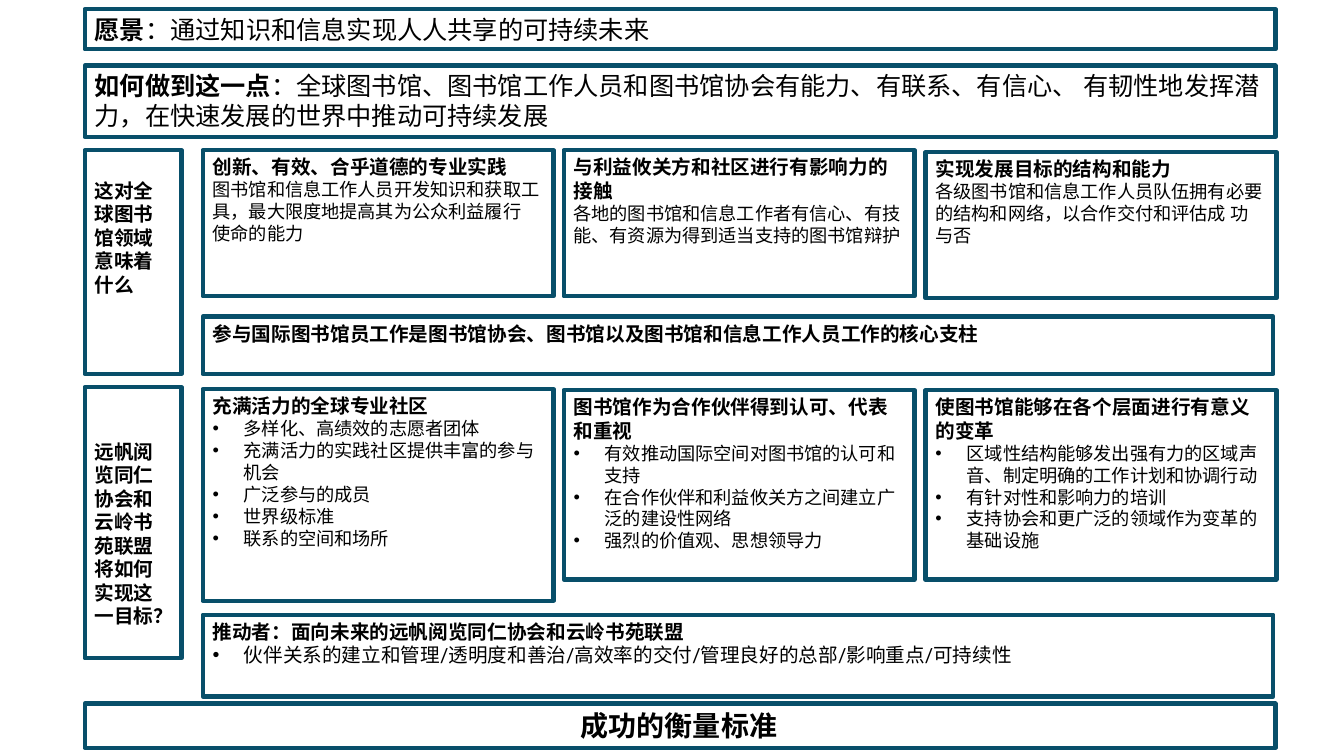
"""Build the one-page library strategy framework slide."""
from lxml import etree
from pptx import Presentation
from pptx.dml.color import RGBColor
from pptx.enum.lang import MSO_LANGUAGE_ID
from pptx.enum.shapes import MSO_SHAPE
from pptx.enum.text import MSO_ANCHOR, MSO_AUTO_SIZE, PP_ALIGN
from pptx.oxml.ns import qn
from pptx.util import Inches, Pt

RECTANGLE = MSO_SHAPE.RECTANGLE
TOP = MSO_ANCHOR.TOP
NO_FIT = MSO_AUTO_SIZE.NONE
LEFT, CENTER = PP_ALIGN.LEFT, PP_ALIGN.CENTER
CHINESE = MSO_LANGUAGE_ID.SIMPLIFIED_CHINESE
FONT = "Roboto"
TEAL, WHITE, BLACK = "084F6A", "FFFFFF", "000000"
BULLET_INDENT = Inches(0.31)

FULL_LEFT, FULL_WIDTH = 0.84, 11.81
SIDE_WIDTH = 0.96
COLUMN_LEFTS, COLUMN_WIDTH = (2.01, 5.59, 9.18), 3.48
BAND_LEFT, BAND_WIDTH = 2.01, 10.62


def frame_box(box, left, top, width, height, top_margin=0.05):
    """Place a box, give it the teal frame and return its text frame."""
    box.left, box.top = Inches(left), Inches(top)
    box.width, box.height = Inches(width), Inches(height)
    box.fill.solid()
    box.fill.fore_color.rgb = RGBColor.from_string(WHITE)
    box.line.color.rgb = RGBColor.from_string(TEAL)
    box.line.width = Pt(3)
    frame = box.text_frame
    frame.word_wrap = True
    frame.auto_size = NO_FIT
    frame.vertical_anchor = TOP
    frame.margin_left, frame.margin_right = Inches(0.1), Inches(0.12)
    frame.margin_top, frame.margin_bottom = Inches(top_margin), Inches(0.05)
    return frame


def write_para(para, runs, size, align=LEFT, bullet=False):
    """Write (text, bold) runs into a paragraph."""
    para.alignment = align
    for text, bold in runs:
        span = para.add_run()
        span.text = text
        span.font.name = FONT
        span.font.size = Pt(size)
        span.font.bold = bold
        span.font.language_id = CHINESE
        span.font.color.rgb = RGBColor.from_string(BLACK)
    if bullet:
        properties = para._p.get_or_add_pPr()
        properties.set("marL", str(BULLET_INDENT))
        properties.set("indent", str(-BULLET_INDENT))
        etree.SubElement(properties, qn("a:buFont")).set("typeface", "Arial")
        etree.SubElement(properties, qn("a:buChar")).set("char", "•")


deck = Presentation()
deck.slide_width, deck.slide_height = Inches(13.33), Inches(7.5)
page = deck.slides.add_slide(deck.slide_layouts[5])

vision = frame_box(page.shapes.title, FULL_LEFT, 0.09, FULL_WIDTH, 0.4)
write_para(vision.paragraphs[0],
           [("愿景", True), ("：通过知识和信息实现人人共享的可持续未来", False)], 18)

banners = [
    (FULL_LEFT, 0.65, FULL_WIDTH, 0.71, 0.05, 18, LEFT,
     [("如何做到这一点", True),
      ("：全球图书馆、图书馆工作人员和图书馆协会有能力、有联系、有信心、 "
       "有韧性地发挥潜力，在快速发展的世界中推动可持续发展", False)]),
    (FULL_LEFT, 1.49, SIDE_WIDTH, 2.22, 0.28, 14, LEFT,
     [("这对全球图书馆领域意味着什么", True)]),
    (FULL_LEFT, 3.84, SIDE_WIDTH, 2.69, 0.52, 14, LEFT,
     [("远帆阅览同仁协会和云岭书苑联盟将如何实现这一目标？", True)]),
    (BAND_LEFT, 3.14, BAND_WIDTH, 0.57, 0.05, 14, LEFT,
     [("参与国际图书馆员工作是图书馆协会、图书馆以及图书馆和信息工作人员工作的核心支柱", True)]),
    (FULL_LEFT, 6.98, FULL_WIDTH, 0.44, 0.05, 20, CENTER,
     [("成功的衡量标准", True)]),
]
for left, top, width, height, margin, size, align, runs in banners:
    box = page.shapes.add_shape(RECTANGLE, 0, 0, 0, 0)
    box.shadow.inherit = False
    frame = frame_box(box, left, top, width, height, margin)
    write_para(frame.paragraphs[0], runs, size, align)

meanings = [
    (1.49, "创新、有效、合乎道德的专业实践",
     "图书馆和信息工作人员开发知识和获取工具，最大限度地提高其为公众利益履行 使命的能力"),
    (1.49, "与利益攸关方和社区进行有影响力的接触",
     "各地的图书馆和信息工作者有信心、有技能、有资源为得到适当支持的图书馆辩护"),
    (1.51, "实现发展目标的结构和能力",
     "各级图书馆和信息工作人员队伍拥有必要的结构和网络，以合作交付和评估成 功与否"),
]
actions = [
    (3.86, 2.1, "充满活力的全球专业社区",
     ["多样化、高绩效的志愿者团体", "充满活力的实践社区提供丰富的参与机会",
      "广泛参与的成员", "世界级标准", "联系的空间和场所"]),
    (3.87, 1.88, "图书馆作为合作伙伴得到认可、代表和重视",
     ["有效推动国际空间对图书馆的认可和支持",
      "在合作伙伴和利益攸关方之间建立广泛的建设性网络", "强烈的价值观、思想领导力"]),
    (3.87, 1.88, "使图书馆能够在各个层面进行有意义的变革",
     ["区域性结构能够发出强有力的区域声音、制定明确的工作计划和协调行动",
      "有针对性和影响力的培训", "支持协会和更广泛的领域作为变革的基础设施"]),
]
enablers = ["伙伴关系的建立和管理/透明度和善治/高效率的交付/管理良好的总部/影响重点/可持续性"]

cards = [(left, top, COLUMN_WIDTH, 1.45, heading, [text], 13, False)
         for left, (top, heading, text) in zip(COLUMN_LEFTS, meanings)]
cards += [(left, top, COLUMN_WIDTH, height, heading, items, 13, True)
          for left, (top, height, heading, items) in zip(COLUMN_LEFTS, actions)]
cards.append((BAND_LEFT, 6.1, BAND_WIDTH, 0.81,
              "推动者：面向未来的远帆阅览同仁协会和云岭书苑联盟", enablers, 14, True))

for left, top, width, height, heading, items, size, bullet in cards:
    box = page.shapes.add_shape(RECTANGLE, 0, 0, 0, 0)
    box.shadow.inherit = False
    frame = frame_box(box, left, top, width, height)
    write_para(frame.paragraphs[0], [(heading, True)], 14)
    for item in items:
        write_para(frame.add_paragraph(), [(item, False)], size, bullet=bullet)

deck.save("out.pptx")
